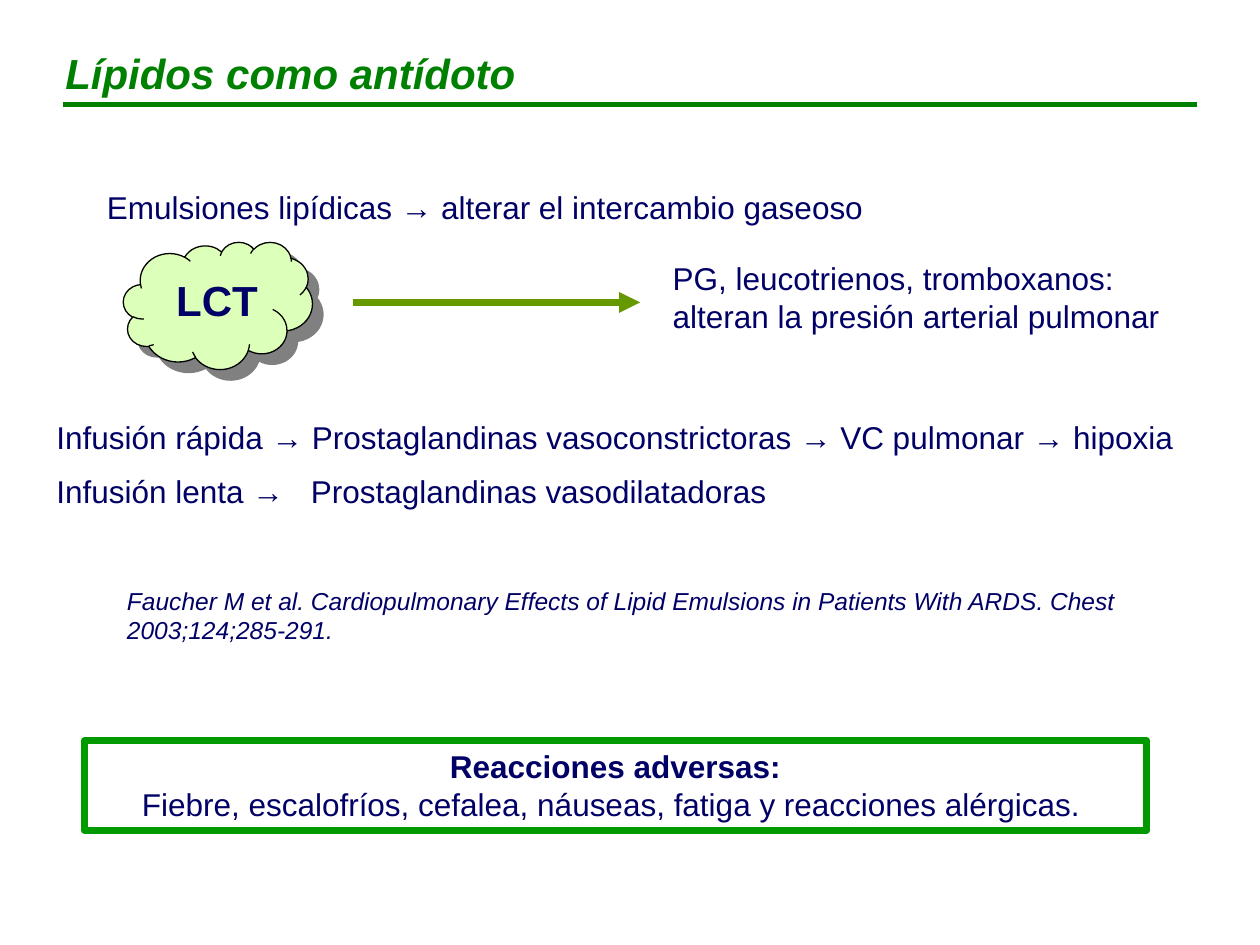
"""Build the slide on lipids as an antidote."""
from lxml.etree import SubElement
from pptx import Presentation
from pptx.dml.color import RGBColor
from pptx.enum.shapes import MSO_CONNECTOR, MSO_SHAPE
from pptx.enum.text import MSO_ANCHOR, MSO_AUTO_SIZE, PP_ALIGN
from pptx.oxml.ns import qn
from pptx.util import Inches, Pt

NAVY, GREEN, FRAME_GREEN = "000066", "008000", "009900"
OLIVE, LIME, BLACK, GRAY = "669900", "DCFFB9", "000000", "808080"

TEXTS = [
    ((0.42, 0.33, 9.08, 0.5), ["Lípidos como antídoto"],
     dict(size=24, color=GREEN, bold=True, italic=True)),
    ((0.75, 1.44, 6.54, 0.4), ["Emulsiones lipídicas → alterar el intercambio gaseoso"], {}),
    ((1.3, 2.13, 1.34, 0.5), ["LCT"], dict(size=24, bold=True)),
    ((5.24, 2.01, 4.49, 0.7),
     ["PG, leucotrienos, tromboxanos: alteran la presión arterial pulmonar"], {}),
    ((0.35, 3.27, 9.53, 0.85),
     ["Infusión rápida → Prostaglandinas vasoconstrictoras → VC pulmonar → hipoxia",
      "Infusión lenta →\tProstaglandinas vasodilatadoras"], dict(gap=9, tab=2.02)),
    ((0.91, 4.6, 8.43, 0.57),
     ["Faucher M et al. Cardiopulmonary Effects of Lipid Emulsions in Patients With ARDS. "
      "Chest 2003;124;285-291."], dict(size=14, italic=True)),
]
REACTIONS_BOX = (0.67, 5.88, 8.43, 0.71)
REACTIONS = [
    ("Reacciones adversas:", True),
    ("Fiebre, escalofríos, cefalea, náuseas, fatiga y reacciones alérgicas. ", False),
]
CLOUD_BOX = (0.98, 1.92, 1.5, 1.01)
EFFECT_ARROW = (2.8, 2.4, 5.08, 2.4)
TITLE_RULE = (0.5, 0.83, 9.5, 0.83)


def rgb(value):
    return RGBColor.from_string(value)


def inches(values):
    return [Inches(value) for value in values]


def write(paragraph, text, size=18, color=NAVY, bold=False, italic=False):
    run = paragraph.add_run()
    run.text = text
    font = run.font
    font.name, font.size, font.bold, font.italic = "Arial", Pt(size), bold, italic
    font.color.rgb = rgb(color)


def paragraphs(frame, count):
    frame.word_wrap = True
    frame.auto_size = MSO_AUTO_SIZE.SHAPE_TO_FIT_TEXT
    frame.vertical_anchor = MSO_ANCHOR.TOP
    return [frame.paragraphs[0]] + [frame.add_paragraph() for _ in range(count - 1)]


def add_text(slide, box, lines, gap=0, tab=None, **style):
    frame = slide.shapes.add_textbox(*inches(box)).text_frame
    for index, (paragraph, line) in enumerate(zip(paragraphs(frame, len(lines)), lines)):
        if index:
            paragraph.space_before = Pt(gap)
        if "\t" in line:
            tabs = SubElement(paragraph._p.get_or_add_pPr(), qn("a:tabLst"))
            SubElement(tabs, qn("a:tab"), pos=str(Inches(tab)), algn="l")
        write(paragraph, line, **style)


def add_line(slide, ends, color, width, arrow=False):
    line = slide.shapes.add_connector(MSO_CONNECTOR.STRAIGHT, *inches(ends))
    line.line.color.rgb, line.line.width = rgb(color), Pt(width)
    if arrow:
        SubElement(line.line._get_or_add_ln(), qn("a:tailEnd"), type="triangle")
    SubElement(line._element.spPr, qn("a:effectLst"))


def add_outlined(slide, preset, box, color, width):
    shape = slide.shapes.add_shape(preset, *inches(box))
    shape.shadow.inherit = False
    shape.fill.background()
    shape.line.color.rgb, shape.line.width = rgb(color), Pt(width)
    return shape


def add_cloud(slide):
    cloud = add_outlined(slide, MSO_SHAPE.CLOUD, CLOUD_BOX, BLACK, 0.75)
    cloud.fill.solid()
    cloud.fill.fore_color.rgb = rgb(LIME)
    effects = cloud._element.spPr.find(qn("a:effectLst"))
    shadow = SubElement(effects, qn("a:outerShdw"), dist=str(Pt(8.5)),
                        dir=str(45 * 60000), algn="ctr", rotWithShape="0")
    SubElement(shadow, qn("a:srgbClr"), val=GRAY)


def add_reactions(slide):
    panel = add_outlined(slide, MSO_SHAPE.RECTANGLE, REACTIONS_BOX, FRAME_GREEN, 4)
    rows = paragraphs(panel.text_frame, len(REACTIONS))
    for paragraph, (text, bold) in zip(rows, REACTIONS):
        paragraph.alignment = PP_ALIGN.CENTER
        write(paragraph, text, bold=bold)


def main():
    deck = Presentation()
    deck.slide_width, deck.slide_height = Inches(10), Inches(7.5)
    slide = deck.slides.add_slide(deck.slide_layouts[6])
    add_line(slide, TITLE_RULE, GREEN, 3)
    add_cloud(slide)
    add_line(slide, EFFECT_ARROW, OLIVE, 4, arrow=True)
    for box, lines, style in TEXTS:
        add_text(slide, box, lines, **style)
    add_reactions(slide)
    deck.save("out.pptx")


if __name__ == "__main__":
    main()
